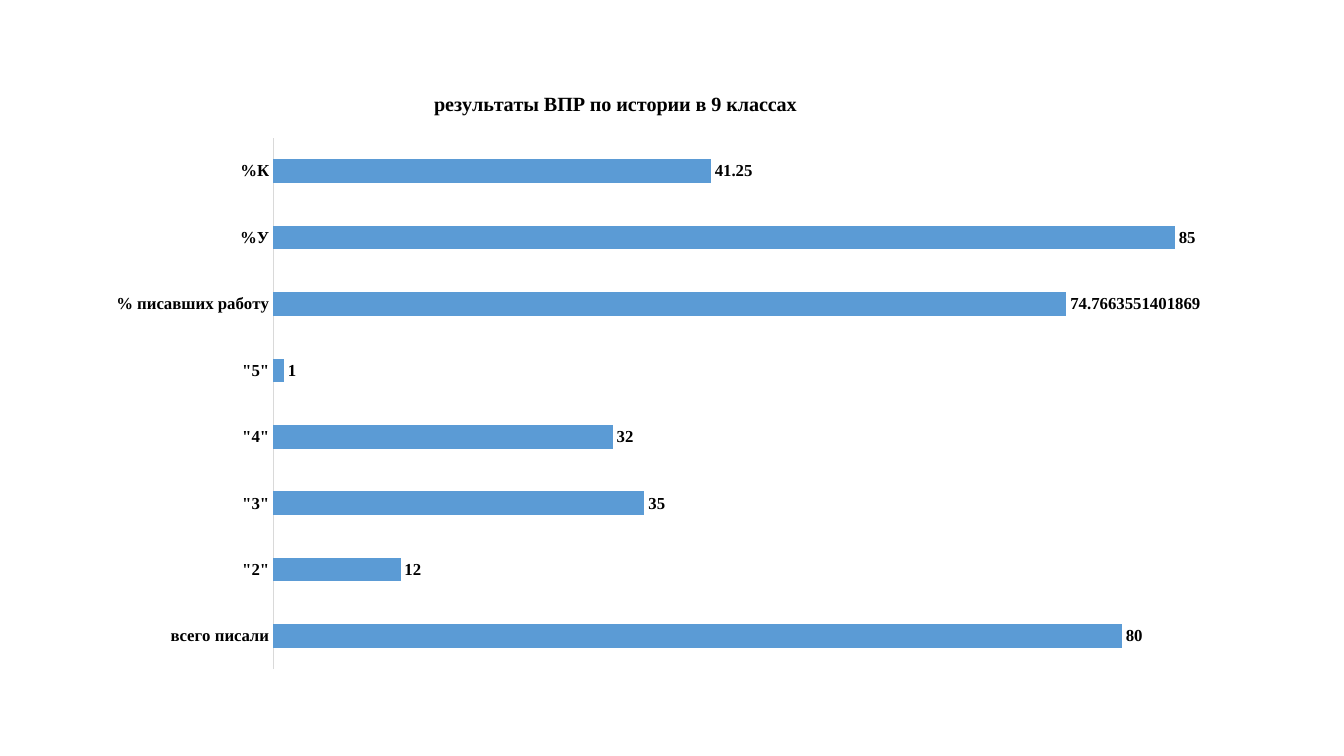
"""Build a slide with a bar chart of history test results in the 9th grades."""
from dataclasses import dataclass

from lxml import etree
from pptx import Presentation
from pptx import util as u
from pptx.chart.data import CategoryChartData
from pptx.dml.color import RGBColor
from pptx.enum import chart as kinds
from pptx.oxml.ns import qn

BLACK = RGBColor(0x00, 0x00, 0x00)
BLUE = RGBColor(0x5B, 0x9B, 0xD5)
GREY = RGBColor(0xD9, 0xD9, 0xD9)
FONT_FORMAT = {"name": "Times New Roman", "bold": True, "italic": False}
TITLE = "результаты ВПР по истории в 9 классах"


@dataclass(frozen=True)
class Result:
    label: str
    value: float
    shown: str = ""


@dataclass(frozen=True)
class Area:
    left: float
    top: float
    width: float
    height: float


RESULTS = [
    Result("всего писали", 80),
    Result('"2"', 12),
    Result('"3"', 35),
    Result('"4"', 32),
    Result('"5"', 1),
    Result("% писавших работу", 74.77, "74.7663551401869"),
    Result("%У", 85),
    Result("%К", 41.25),
]
CHART_AREA = Area(0.92, 0.73, 11.5, 6.02)
PLOT_AREA = Area(1.79, 0.64, 9.47, 5.27)
TITLE_LEFT, TITLE_TOP = 3.35, 0.14


def format_font(font, size: float) -> None:
    for name, value in {**FONT_FORMAT, "size": u.Pt(size)}.items():
        setattr(font, name, value)
    font.color.rgb = BLACK


def write(frame, words: str, size: float) -> None:
    span = frame.paragraphs[0].add_run()
    span.text = words
    format_font(span.font, size)


def place(parent, index: int, values: dict[str, object]) -> None:
    for old in parent.findall(qn("c:layout")):
        parent.remove(old)
    layout = etree.Element(qn("c:layout"))
    manual = etree.SubElement(layout, qn("c:manualLayout"))
    for name, value in values.items():
        etree.SubElement(manual, qn(f"c:{name}")).set("val", str(value))
    parent.insert(index, layout)


def format_title(chart) -> None:
    chart.has_title = True
    title = chart.chart_title
    title.include_in_layout = False
    write(title.text_frame, TITLE, 14.4)
    place(title.element, 1, {
        "xMode": "edge",
        "yMode": "edge",
        "x": TITLE_LEFT / CHART_AREA.width,
        "y": TITLE_TOP / CHART_AREA.height,
    })


def format_axes(chart) -> None:
    category_axis = chart.category_axis
    axis_format = {
        "major_tick_mark": kinds.XL_TICK_MARK.NONE,
        "minor_tick_mark": kinds.XL_TICK_MARK.NONE,
        "has_major_gridlines": False,
    }
    for name, value in axis_format.items():
        setattr(category_axis, name, value)
    format_font(category_axis.tick_labels.font, 12)
    category_axis.format.line.color.rgb = GREY
    category_axis.format.line.width = u.Pt(0.75)
    value_format = {
        "visible": False,
        "has_major_gridlines": False,
        "minimum_scale": 0,
        "maximum_scale": 90,
    }
    for name, value in value_format.items():
        setattr(chart.value_axis, name, value)


def format_bars(chart) -> None:
    plot = chart.plots[0]
    plot.gap_width = 182
    plot.vary_by_categories = False
    series = plot.series[0]
    series.format.fill.solid()
    series.format.fill.fore_color.rgb = BLUE
    series.invert_if_negative = False
    labels = series.data_labels
    labels.show_value = True
    labels.position = kinds.XL_LABEL_POSITION.OUTSIDE_END
    format_font(labels.font, 12)
    for index, result in enumerate(RESULTS):
        if result.shown:
            label = series.points[index].data_label
            write(label.text_frame, result.shown, 12)
            label.position = kinds.XL_LABEL_POSITION.OUTSIDE_END


def add_results_chart(page) -> None:
    data = CategoryChartData()
    data.categories = [result.label for result in RESULTS]
    data.add_series("Series 1", [result.value for result in RESULTS])
    area = CHART_AREA
    chart = page.shapes.add_chart(
        kinds.XL_CHART_TYPE.BAR_CLUSTERED,
        u.Inches(area.left), u.Inches(area.top),
        u.Inches(area.width), u.Inches(area.height), data,
    ).chart
    chart.has_legend = False
    format_font(chart.font, 12)
    format_title(chart)
    format_axes(chart)
    format_bars(chart)
    plot_area = chart.chart_title.element.getparent().find(qn("c:plotArea"))
    place(plot_area, 0, {
        "layoutTarget": "inner",
        "xMode": "edge",
        "yMode": "edge",
        "x": PLOT_AREA.left / area.width,
        "y": PLOT_AREA.top / area.height,
        "w": PLOT_AREA.width / area.width,
        "h": PLOT_AREA.height / area.height,
    })


def main() -> None:
    deck = Presentation()
    deck.slide_width = u.Inches(13.33)
    deck.slide_height = u.Inches(7.5)
    page = deck.slides.add_slide(deck.slide_layouts[6])
    add_results_chart(page)
    deck.save("out.pptx")


if __name__ == "__main__":
    main()
